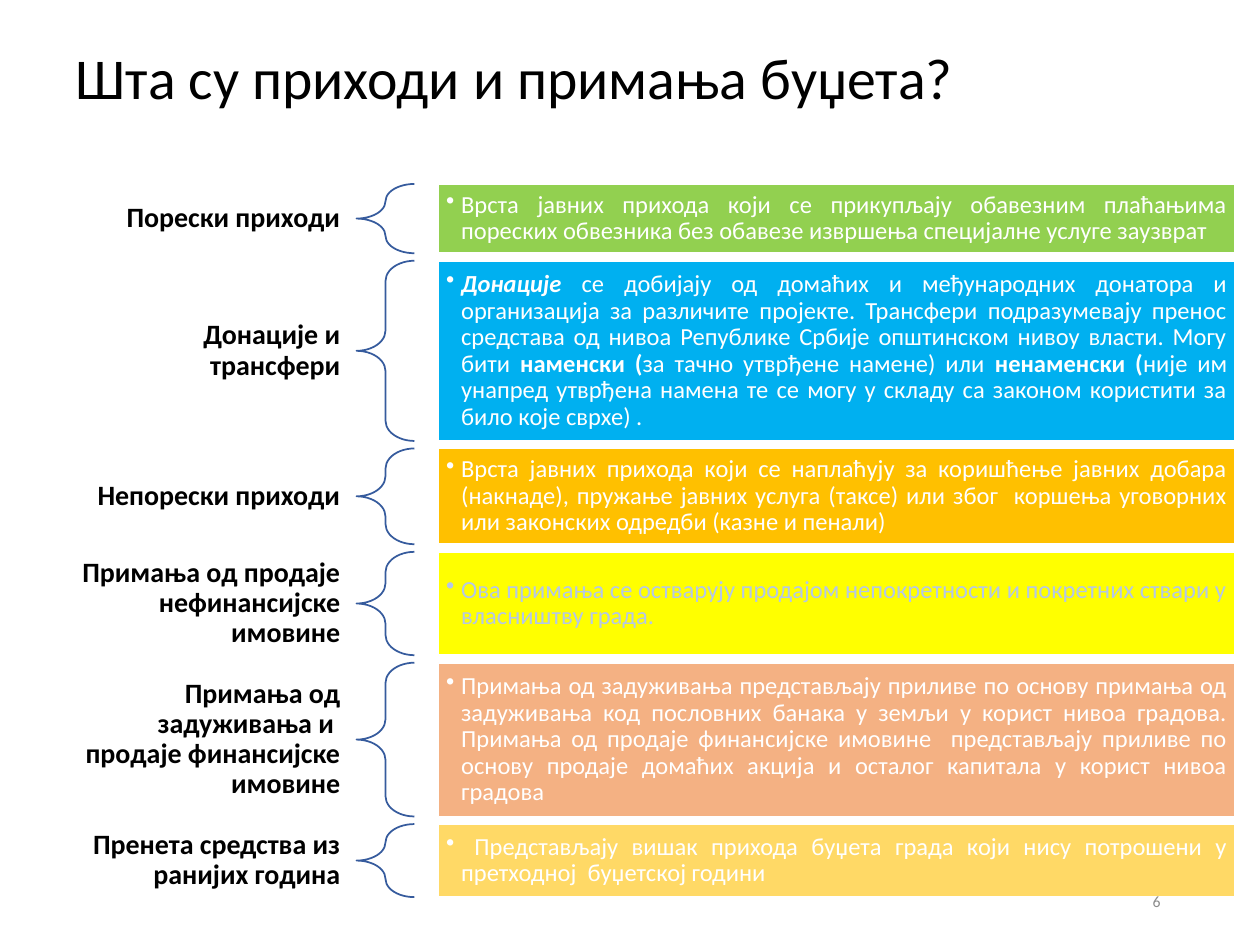
"""Build the slide that explains the kinds of budget revenue."""
from dataclasses import dataclass

from lxml import etree
from pptx import Presentation
from pptx import util as u
from pptx.dml.color import RGBColor
from pptx.enum import shapes, text
from pptx.oxml import ns


@dataclass(frozen=True)
class Theme:
    font: str = "Calibri"
    title_size: float = 33
    label_size: float = 16
    body_size: float = 14
    number_size: float = 9
    black: str = "000000"
    white: str = "FFFFFF"
    pale_blue: str = "B4C7E7"
    grey: str = "8C8C8C"
    brace: str = "365B9D"
    green: str = "92D050"
    blue: str = "00B0F0"
    amber: str = "FFC000"
    yellow: str = "FFFF00"
    salmon: str = "F4B183"
    sand: str = "FFD966"


def add_span(para, wording, size, color, bold=False, italic=False):
    span = para.add_run()
    span.text = wording
    span.font.name = theme.font
    span.font.size = u.Pt(size)
    span.font.color.rgb = RGBColor.from_string(color)
    span.font.bold = bold
    span.font.italic = italic


def set_frame(shape, align, side=0.1, edge=0.05, spacing=0.9):
    frame = shape.text_frame
    frame.word_wrap = True
    frame.vertical_anchor = text.MSO_ANCHOR.MIDDLE
    frame.margin_left = frame.margin_right = u.Inches(side)
    frame.margin_top = frame.margin_bottom = u.Inches(edge)
    para = frame.paragraphs[0]
    para.alignment = align
    para.line_spacing = spacing
    return para


theme = Theme()
rows = [
    ("Порески приходи", 0.55, 0.35, theme.green, theme.white, [
        ("Врста јавних прихода који се прикупљају обавезним плаћањима пореских "
         "обвезника без обавезе извршења специјалне услуге заузврат", False, False)]),
    ("Донације и трансфери", 1.43, 0.58, theme.blue, theme.white, [
        ("Донације ", True, True),
        ("се добијају од домаћих и међународних донатора и организација за различите "
         "пројекте. Трансфери подразумевају пренос средстава од нивоа Републике Србије "
         "општинском нивоу власти. Могу бити ", False, False),
        ("наменски (", True, False),
        ("за тачно утврђене намене) или ", False, False),
        ("ненаменски (", True, False),
        ("није им унапред утврђена намена те се могу у складу са законом користити "
         "за било које сврхе) .", False, False)]),
    ("Непорески приходи", 0.76, 0.35, theme.amber, theme.white, [
        ("Врста јавних прихода који се наплаћују за коришћење јавних добара (накнаде), "
         "пружање јавних услуга (таксе) или због  коршења уговорних или законских "
         "одредби (казне и пенали)", False, False)]),
    ("Примања од продаје нефинансијске имовине", 0.82, 0.82, theme.yellow, theme.pale_blue, [
        ("Ова примања се остварују продајом непокретности и покретних ствари у "
         "власништву града.", False, False)]),
    ("Примања од задуживања и  продаје финансијске имовине", 1.22, 1.08, theme.salmon, theme.white, [
        ("Примања од задуживања представљају приливе по основу примања од задуживања "
         "код пословних банака у земљи у корист нивоа градова. Примања од продаје "
         "финансијске имовине  представљају приливе по основу продаје домаћих акција "
         "и осталог капитала у корист нивоа градова", False, False)]),
    ("Пренета средства из ранијих година", 0.58, 0.58, theme.sand, theme.white, [
        (" Представљају вишак прихода буџета града који нису потрошени у претходној  "
         "буџетској години", False, False)]),
]

deck = Presentation()
deck.slide_width, deck.slide_height = u.Inches(10), u.Inches(7.5)
page = deck.slides.add_slide(deck.slide_layouts[5])

title = page.shapes.title
title.left, title.top = u.Inches(0.5), u.Inches(0.3)
title.width, title.height = u.Inches(9), u.Inches(0.68)
para = set_frame(title, text.PP_ALIGN.LEFT)
add_span(para, "Шта су приходи и примања буџета?", theme.title_size, theme.black)

top, gap = 1.46, 0.06
for label, height, label_height, fill, ink, spans in rows:
    label_top = top + (height - label_height) / 2
    box = page.shapes.add_textbox(
        u.Inches(0.5), u.Inches(label_top), u.Inches(2.32), u.Inches(label_height))
    para = set_frame(box, text.PP_ALIGN.RIGHT, 0.12, 0.04)
    add_span(para, label, theme.label_size, theme.black, bold=True)

    brace = page.shapes.add_shape(
        shapes.MSO_SHAPE.LEFT_BRACE,
        u.Inches(2.83), u.Inches(top), u.Inches(0.46), u.Inches(height))
    brace.adjustments[0] = 0.35
    brace.shadow.inherit = False
    brace.fill.background()
    brace.line.color.rgb = RGBColor.from_string(theme.brace)
    brace.line.width = u.Pt(1)

    panel = page.shapes.add_shape(
        shapes.MSO_SHAPE.RECTANGLE,
        u.Inches(3.48), u.Inches(top), u.Inches(6.32), u.Inches(height))
    panel.shadow.inherit = False
    panel.fill.solid()
    panel.fill.fore_color.rgb = RGBColor.from_string(fill)
    panel.line.color.rgb = RGBColor.from_string(theme.white)
    panel.line.width = u.Pt(1)
    para = set_frame(panel, text.PP_ALIGN.JUSTIFY, 0.06, 0.06)
    props = para._p.get_or_add_pPr()
    props.set("marL", str(u.Inches(0.12)))
    props.set("indent", str(u.Inches(-0.12)))
    etree.SubElement(props, ns.qn("a:buChar")).set("char", "•")
    for wording, bold, italic in spans:
        add_span(para, wording, theme.body_size, ink, bold, italic)

    top += height + gap

number = page.shapes.add_textbox(
    u.Inches(7.06), u.Inches(6.95), u.Inches(2.25), u.Inches(0.4))
para = set_frame(number, text.PP_ALIGN.RIGHT, spacing=1.0)
add_span(para, "6", theme.number_size, theme.grey)

deck.save("out.pptx")
